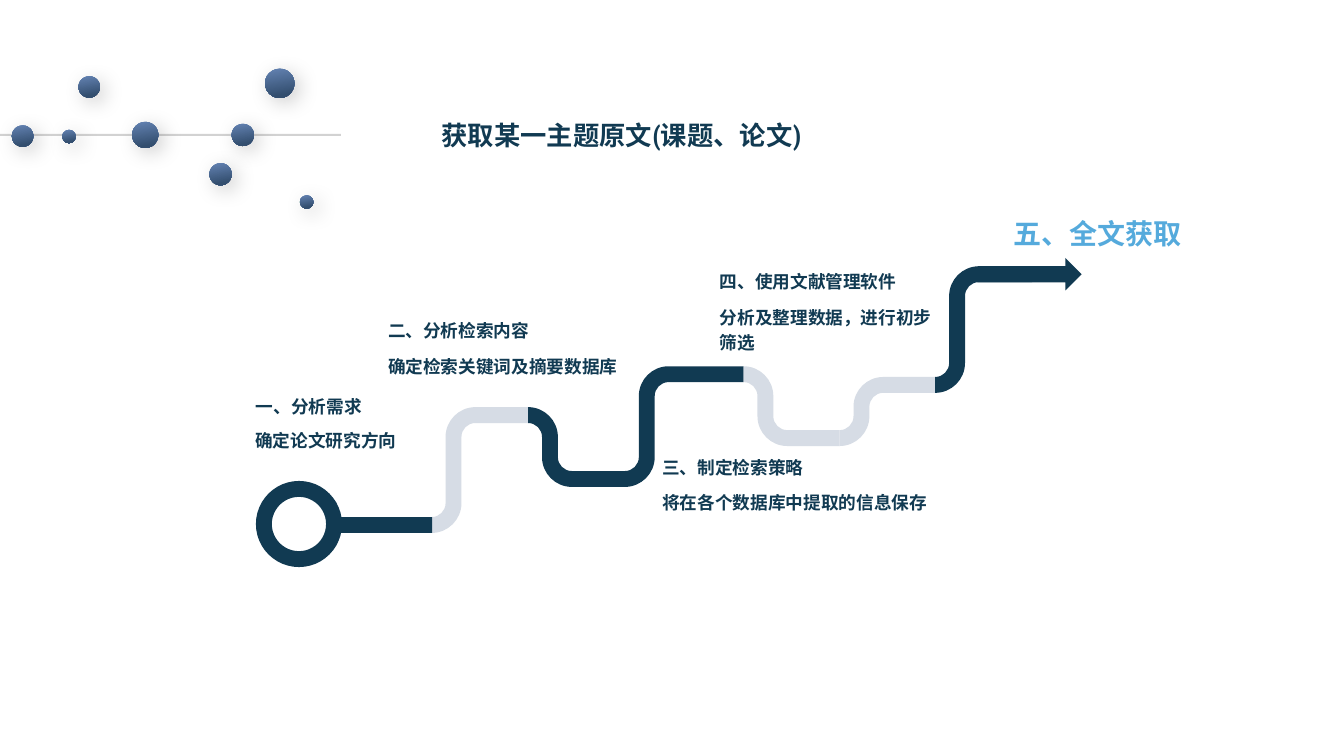
from dataclasses import dataclass
from itertools import pairwise

from lxml.etree import SubElement
from pptx import Presentation
from pptx.dml.color import RGBColor as RGB
from pptx.enum.shapes import MSO_CONNECTOR as Connector, MSO_SHAPE as Shape
from pptx.enum.text import MSO_ANCHOR as Anchor, MSO_AUTO_SIZE as AutoSize, PP_ALIGN as Align
from pptx.oxml.ns import qn
from pptx.util import Cm, Pt


@dataclass(frozen=True)
class Theme:
    navy: RGB = RGB(0x11, 0x3A, 0x52)
    pale: RGB = RGB(0xD6, 0xDC, 0xE5)
    sky: RGB = RGB(0x55, 0xAA, 0xDC)
    grey: RGB = RGB(0xA6, 0xA6, 0xA6)
    bead_light: RGB = RGB(0x64, 0x83, 0xB3)
    bead_dark: RGB = RGB(0x33, 0x4E, 0x6E)
    title_font: str = "Roboto Condensed"
    body_font: str = "Arial"
    title_size: float = 18.8
    goal_size: float = 20
    step_size: float = 12.6


theme = Theme()

TITLE = "获取某一主题原文(课题、论文)"
GOAL = "五、全文获取"
# heading, its left, top, width; body lines, their left, top, width (cm)
STEPS = [
    (("一、分析需求", 6.45, 9.88, 3.5), (["确定论文研究方向"], 6.43, 10.72, 4.42)),
    (("二、分析检索内容", 9.78, 7.96, 5.5), (["确定检索关键词及摘要数据库"], 9.78, 8.86, 5.97)),
    (("三、制定检索策略", 16.69, 11.4, 5.95), (["将在各个数据库中提取的信息保存"], 16.69, 12.28, 6.89)),
    (("四、使用文献管理软件", 18.14, 6.71, 5.1),
     (["分析及整理数据，进行初步", "筛选"], 18.14, 7.62, 5.77)),
]
# points where one bend of the road hands over to the next (cm), and the bends' colours
JOINTS = [(10.88, 13.23), (13.31, 10.46), (15.75, 12.07), (18.74, 9.43),
          (21.16, 11.04), (23.57, 9.7), (26.01, 6.91)]
BEND_COLORS = [theme.pale, theme.navy, theme.navy, theme.pale, theme.pale, theme.navy]
# centre x, centre y, diameter (cm)
BEADS = [(7.05, 2.1, 0.74), (3.66, 3.4, 0.66), (6.12, 3.4, 0.56), (2.25, 2.19, 0.54),
         (1.74, 3.44, 0.34), (5.56, 4.39, 0.56), (0.57, 3.43, 0.54), (7.73, 5.09, 0.34)]
ROAD_HALF, BEND_RADIUS = 0.2, 0.55
ARC_PULL = 0.55  # how far a quarter arc's handles reach toward its corner


def write(box, lines, font, size, color, spacing, anchor=Anchor.TOP):
    frame = box.text_frame
    frame.word_wrap = True
    frame.auto_size = AutoSize.SHAPE_TO_FIT_TEXT
    frame.vertical_anchor = anchor
    for index, line in enumerate(lines):
        paragraph = frame.add_paragraph() if index else frame.paragraphs[0]
        paragraph.alignment = Align.LEFT
        paragraph.line_spacing = spacing
        run = paragraph.add_run()
        run.text = line
        run.font.name, run.font.size, run.font.bold = font, Pt(size), True
        run.font.color.rgb = color


def add_label(slide, lines, left, top, width, height=0.64,
              size=theme.step_size, color=theme.navy, anchor=Anchor.TOP):
    box = slide.shapes.add_textbox(Cm(left), Cm(top), Cm(width), Cm(height * len(lines)))
    frame = box.text_frame
    frame.margin_left = frame.margin_top = frame.margin_right = frame.margin_bottom = 0
    write(box, lines, theme.body_font, size, color, 1.2, anchor)


def paint(shape, color):
    shape.shadow.inherit = False
    shape.fill.solid()
    shape.fill.fore_color.rgb = color
    shape.line.fill.background()


def bend_edge(start, end, offset):
    """Ends of the arcs and straights on one side of an S-bend, offset from its centre line."""
    (x0, y0), (x1, y1) = start, end
    way = 1 if y1 > y0 else -1
    riser = x0 + BEND_RADIUS + offset
    near, far = y0 - way * offset, y1 - way * offset
    return [(x0, near), (riser, y0 + way * BEND_RADIUS), (riser, y1 - way * BEND_RADIUS),
            (x0 + 2 * BEND_RADIUS, far), (x1, far)]


def round_corner(line, before, starts_level):
    """Turn a straight path segment into a quarter arc."""
    after = line.find(qn("a:pt"))
    (x0, y0), (x1, y1) = [(int(p.get("x")), int(p.get("y"))) for p in (before, after)]
    corner_x, corner_y = (x1, y0) if starts_level else (x0, y1)
    line.tag = qn("a:cubicBezTo")
    for index, (x, y) in enumerate([(x0, y0), (x1, y1)]):
        handle = SubElement(line, qn("a:pt"), x=str(round(x + ARC_PULL * (corner_x - x))),
                            y=str(round(y + ARC_PULL * (corner_y - y))))
        line.insert(index, handle)


def add_bend(slide, start, end, color):
    outline = bend_edge(start, end, ROAD_HALF) + bend_edge(start, end, -ROAD_HALF)[::-1]
    first, *rest = [(Cm(x), Cm(y)) for x, y in outline]
    builder = slide.shapes.build_freeform(*first)
    builder.add_line_segments(rest, close=True)
    bend = builder.convert_to_shape()
    paint(bend, color)
    corners = list(bend.element.iter(qn("a:pt")))
    segments = list(bend.element.iter(qn("a:lnTo")))
    for index, starts_level in [(0, True), (2, False), (6, True), (8, False)]:
        round_corner(segments[index], corners[index], starts_level)


def add_road(slide):
    for (start, end), color in zip(pairwise(JOINTS), BEND_COLORS):
        add_bend(slide, start, end, color)
    for kind, *place in [(Shape.DONUT, 6.45, 12.12, 2.17, 2.17),
                         (Shape.RECTANGLE, 8.59, 13.03, 2.3, 0.4),
                         (Shape.RIGHT_ARROW, 24.64, 6.5, 2.62, 0.82)]:
        part = slide.shapes.add_shape(kind, *map(Cm, place))
        paint(part, theme.navy)
        if kind == Shape.DONUT:
            part.adjustments[0] = 0.185


def add_thread(slide):
    thread = slide.shapes.add_connector(Connector.STRAIGHT, Cm(0), Cm(3.4), Cm(8.59), Cm(3.4))
    thread.line.width = Pt(1.5)
    thread.line.color.rgb = theme.grey
    properties = thread.element.spPr
    SubElement(next(properties.iter(qn("a:srgbClr"))), qn("a:alpha"), val="50000")
    SubElement(properties, qn("a:effectLst"))


def add_bead(slide, x, y, diameter):
    bead = slide.shapes.add_shape(Shape.OVAL, Cm(x - diameter / 2), Cm(y - diameter / 2),
                                  Cm(diameter), Cm(diameter))
    bead.line.fill.background()
    bead.fill.gradient()
    bead.fill.gradient_angle = 280
    light, dark = bead.fill.gradient_stops
    light.color.rgb, light.position = theme.bead_light, 0
    dark.color.rgb, dark.position = theme.bead_dark, 0.87
    bead.shadow.inherit = False
    effects = bead.element.spPr.find(qn("a:effectLst"))
    shadow = SubElement(effects, qn("a:outerShdw"), blurRad=str(Pt(15)), dist=str(Pt(5)),
                        dir=str(45 * 60000), algn="tl", rotWithShape="0")
    SubElement(SubElement(shadow, qn("a:srgbClr"), val="000000"), qn("a:alpha"), val="20000")


def main():
    deck = Presentation()
    deck.slide_width, deck.slide_height = Cm(33.87), Cm(19.05)
    slide = deck.slides.add_slide(deck.slide_layouts[5])
    title = slide.shapes.title
    title.left, title.top, title.width, title.height = map(Cm, (10.87, 2.48, 10.29, 1.45))
    write(title, [TITLE], theme.title_font, theme.title_size, theme.navy, 1.5)
    add_road(slide)
    for (heading, *heading_place), (body, *body_place) in STEPS:
        add_label(slide, [heading], *heading_place)
        add_label(slide, body, *body_place, anchor=Anchor.MIDDLE)
    add_label(slide, [GOAL], 25.53, 5.28, 4.88, 1.02, theme.goal_size, theme.sky)
    add_thread(slide)
    for bead in BEADS:
        add_bead(slide, *bead)
    deck.save("out.pptx")


if __name__ == "__main__":
    main()
